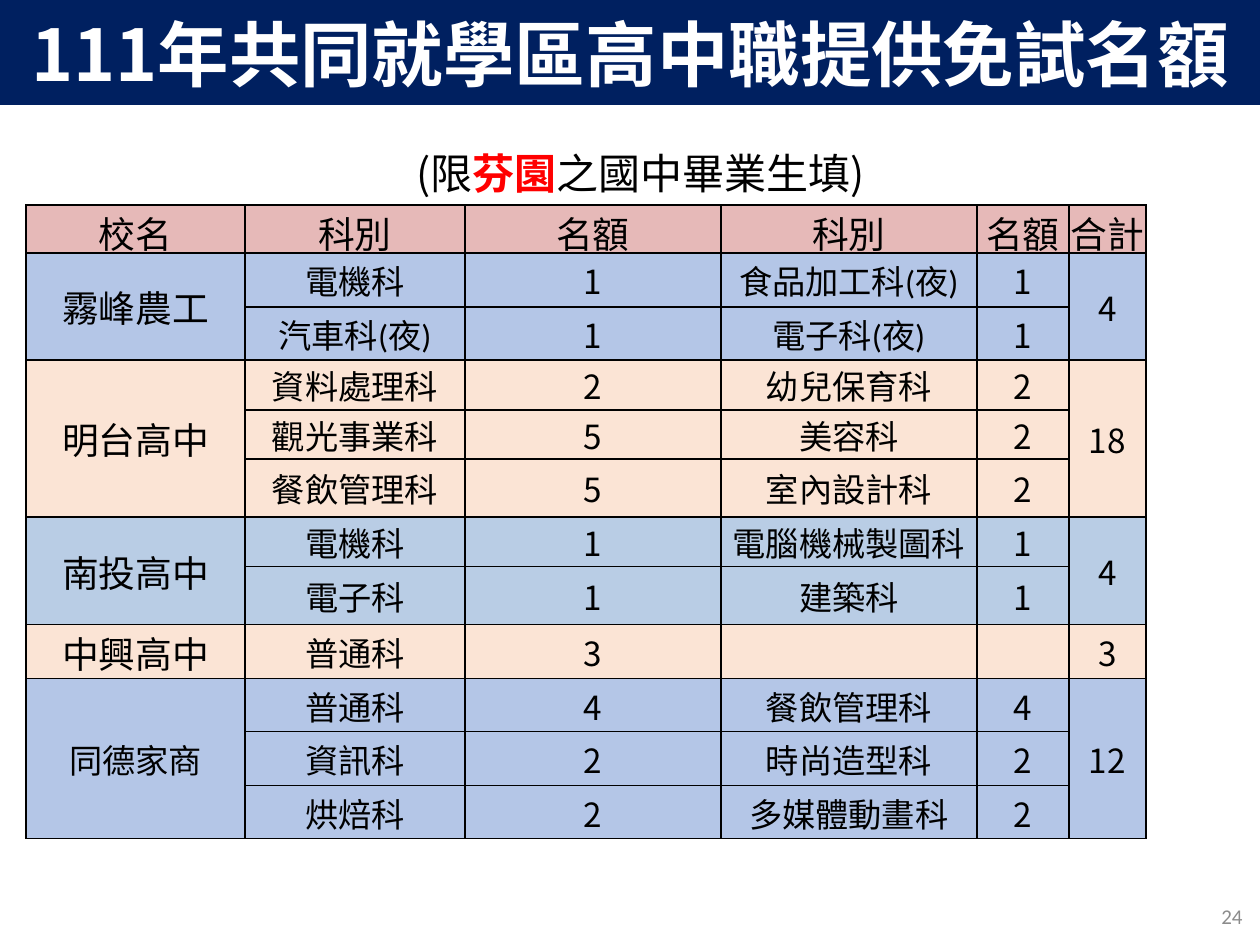
import pptx
import pptx.util
import pptx.dml.color
import pptx.enum.shapes
import pptx.enum.text
import lxml.etree

PX = 914400 // 126
CJK = "Noto Sans CJK SC"
LATIN = "Calibri"
ALIGN = pptx.enum.text.PP_ALIGN
MIDDLE = pptx.enum.text.MSO_ANCHOR.MIDDLE


def color(value):
    return pptx.dml.color.RGBColor.from_string(value)


def add_span(para, text, size, font=CJK, ink="000000", bold=False, align=ALIGN.CENTER):
    para.alignment = align
    span = para.add_run()
    span.text = text
    span.font.size = pptx.util.Pt(size)
    span.font.name = font
    span.font.bold = bold
    span.font.color.rgb = color(ink)
    east_asian = lxml.etree.SubElement(span.font._element, pptx.oxml.ns.qn("a:ea"))
    east_asian.set("typeface", CJK)


deck = pptx.Presentation()
deck.slide_width = 1260 * PX
deck.slide_height = 945 * PX
page = deck.slides.add_slide(deck.slide_layouts[6])

# Title band
band = page.shapes.add_shape(
    pptx.enum.shapes.MSO_SHAPE.RECTANGLE, 0, 0, 1260 * PX, 105 * PX)
band.shadow.inherit = False
band.fill.solid()
band.fill.fore_color.rgb = color("002060")
band.line.fill.background()
band.text_frame.word_wrap = True
band.text_frame.vertical_anchor = MIDDLE
band.text_frame.margin_left = band.text_frame.margin_right = 0
add_span(band.text_frame.paragraphs[0], "111年共同就學區高中職提供免試名額",
         40.8, ink="FFFFFF", bold=True)

# Subtitle
box = page.shapes.add_textbox(26 * PX, 141 * PX, 1230 * PX, 63 * PX)
box.text_frame.word_wrap = True
para = box.text_frame.paragraphs[0]
add_span(para, "(限", 24)
add_span(para, "芬園", 24, ink="FF0000", bold=True)
add_span(para, "之國中畢業生填)", 24)

# Page number
box = page.shapes.add_textbox(961 * PX, 891 * PX, 294 * PX, 50 * PX)
box.text_frame.word_wrap = True
box.text_frame.vertical_anchor = MIDDLE
add_span(box.text_frame.paragraphs[0], "24", 12, LATIN, "8C8C8C", align=ALIGN.RIGHT)

# Quota table: school, name size, fill, total, department rows
header = ["校名", "科別", "名額", "科別", "名額", "合計"]
schools = [
    ("霧峰農工", 21, "B4C6E7", "4", [
        ("電機科", "1", "食品加工科(夜)", "1"),
        ("汽車科(夜)", "1", "電子科(夜)", "1")]),
    ("明台高中", 21, "FBE4D5", "18", [
        ("資料處理科", "2", "幼兒保育科", "2"),
        ("觀光事業科", "5", "美容科", "2"),
        ("餐飲管理科", "5", "室內設計科", "2")]),
    ("南投高中", 21, "B9CDE5", "4", [
        ("電機科", "1", "電腦機械製圖科", "1"),
        ("電子科", "1", "建築科", "1")]),
    ("中興高中", 21, "FBE4D5", "3", [
        ("普通科", "3", "", "")]),
    ("同德家商", 19, "B4C6E7", "12", [
        ("普通科", "4", "餐飲管理科", "4"),
        ("資訊科", "2", "時尚造型科", "2"),
        ("烘焙科", "2", "多媒體動畫科", "2")]),
]
widths = [219, 220, 256, 256, 92, 77]
heights = [48, 54, 53, 50, 49, 58, 50, 58, 54, 53, 54, 53]

table = page.shapes.add_table(
    len(heights), len(widths), 26 * PX, 205 * PX,
    sum(widths) * PX, sum(heights) * PX).table
for column, width in zip(table.columns, widths):
    column.width = width * PX
for row, height in zip(table.rows, heights):
    row.height = height * PX

# Each grid row holds its fill and the (text, size) of every cell
grid = [("E6B9B8", [(text, 21) for text in header])]
for school, name_size, fill, total, departments in schools:
    first, last = len(grid), len(grid) + len(departments) - 1
    for index, department in enumerate(departments):
        name, amount = (school, total) if index == 0 else ("", "")
        grid.append((fill, [(name, name_size)]
                     + [(text, 19) for text in department] + [(amount, 19)]))
    if last > first:
        for column in (0, len(widths) - 1):
            table.cell(first, column).merge(table.cell(last, column))

for row, (fill, entries) in enumerate(grid):
    for column, (text, size) in enumerate(entries):
        cell = table.cell(row, column)
        cell.margin_left = cell.margin_right = cell.margin_top = PX
        cell.margin_bottom = 0
        cell.vertical_anchor = MIDDLE
        properties = cell._tc.get_or_add_tcPr()
        for side in ("a:lnL", "a:lnR", "a:lnT", "a:lnB"):
            border = lxml.etree.SubElement(
                properties, pptx.oxml.ns.qn(side), w=str(pptx.util.Pt(1)))
            solid = lxml.etree.SubElement(border, pptx.oxml.ns.qn("a:solidFill"))
            lxml.etree.SubElement(solid, pptx.oxml.ns.qn("a:srgbClr"), val="000000")
        cell.fill.solid()
        cell.fill.fore_color.rgb = color(fill)
        if text:
            font = CJK if text.isdigit() else LATIN
            add_span(cell.text_frame.paragraphs[0], text, size, font)

deck.save("out.pptx")
